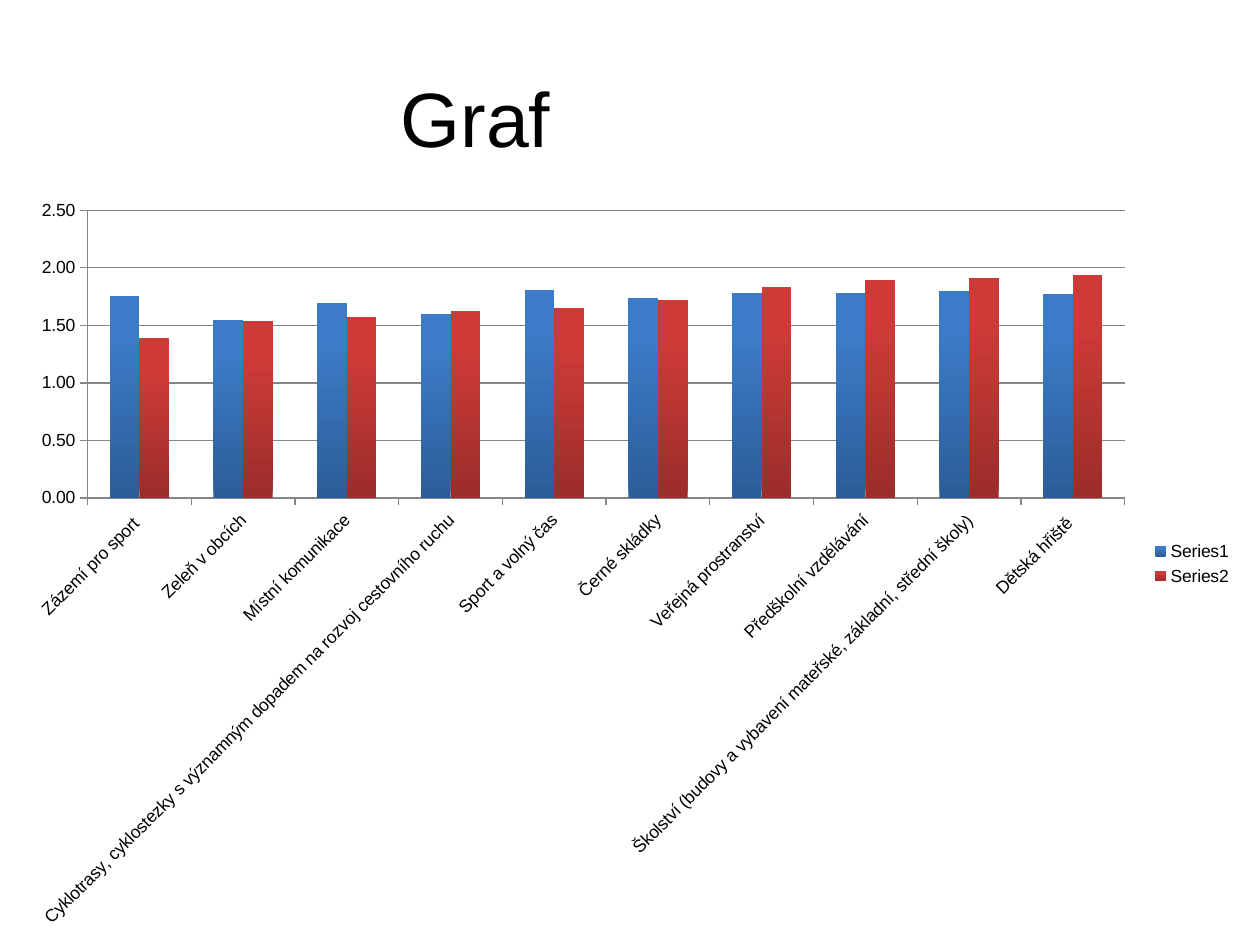
from pptx import Presentation
from pptx.chart.data import CategoryChartData
from pptx.dml.color import RGBColor
from pptx.enum.chart import XL_CHART_TYPE as Kind, XL_LEGEND_POSITION as Side, XL_TICK_MARK as Tick
from pptx.enum.text import MSO_ANCHOR as Anchor, PP_ALIGN as Align
from pptx.util import Inches, Pt

BLACK = RGBColor(0x00, 0x00, 0x00)
GRAY = RGBColor(0x86, 0x86, 0x86)
BLUES = RGBColor(0x2C, 0x5D, 0x98), RGBColor(0x3C, 0x7B, 0xC7)
REDS = RGBColor(0x9B, 0x2D, 0x2A), RGBColor(0xCE, 0x3B, 0x37)

TOPICS = [
    "Zázemí pro sport ",
    "Zeleň v obcích",
    "Místní komunikace",
    "Cyklotrasy, cyklostezky s\u00a0významným dopadem na rozvoj cestovního ruchu",
    "Sport a volný čas",
    "Černé skládky",
    "Veřejná prostranství",
    "Předškolní vzdělávání",
    "Školství (budovy a vybavení mateřské, základní, střední školy)",
    "Dětská hřiště ",
]
SCORES = {
    "Series1": [1.75, 1.55, 1.69, 1.6, 1.81, 1.74, 1.78, 1.78, 1.8, 1.77],
    "Series2": [1.39, 1.54, 1.57, 1.62, 1.65, 1.72, 1.83, 1.89, 1.91, 1.94],
}

deck = Presentation()
deck.slide_width, deck.slide_height = Inches(10), Inches(7.5)
slide = deck.slides.add_slide(deck.slide_layouts[6])

# Title
box = slide.shapes.add_textbox(Inches(0.5), Inches(0.3), Inches(6.55), Inches(1.25))
frame = box.text_frame
frame.word_wrap = True
frame.vertical_anchor = Anchor.MIDDLE
frame.text = "Graf"
title = frame.paragraphs[0]
title.alignment = Align.CENTER
font = title.runs[0].font
font.name, font.size = "Arial", Pt(44)
font.color.rgb = BLACK

# Chart
data = CategoryChartData(number_format="#,##0.00")
data.categories = TOPICS
for name, marks in SCORES.items():
    data.add_series(name, marks)
chart = slide.shapes.add_chart(
    Kind.COLUMN_CLUSTERED, 0, Inches(1.47), Inches(9.88), Inches(6.01), data
).chart
chart.has_title = False
chart.font.name, chart.font.size = "Arial", Pt(10)
chart.font.color.rgb = BLACK
chart.has_legend = True
chart.legend.position = Side.RIGHT
chart.legend.include_in_layout = False

plot = chart.plots[0]
plot.vary_by_categories = False
plot.gap_width, plot.overlap = 150, 0
for bars, shades in zip(plot.series, (BLUES, REDS)):
    fill = bars.format.fill
    fill.gradient()
    fill.gradient_angle = 90
    for stop, shade, place in zip(fill.gradient_stops, shades, (0, 0.8)):
        stop.color.rgb = shade
        stop.position = place

# Axes
topic, score = chart.category_axis, chart.value_axis
score.minimum_scale, score.maximum_scale, score.major_unit = 0, 2.5, 0.5
score.has_major_gridlines = True
score.tick_labels.number_format = "#,##0.00"
score.tick_labels.number_format_is_linked = False
for axis in (topic, score):
    axis.major_tick_mark, axis.minor_tick_mark = Tick.OUTSIDE, Tick.NONE
    axis.tick_labels.font.size = Pt(10)
for line in (topic.format.line, score.format.line, score.major_gridlines.format.line):
    line.color.rgb = GRAY
    line.width = Pt(0.75)
topic._element.txPr.bodyPr.set("rot", str(-45 * 60000))

deck.save("out.pptx")
